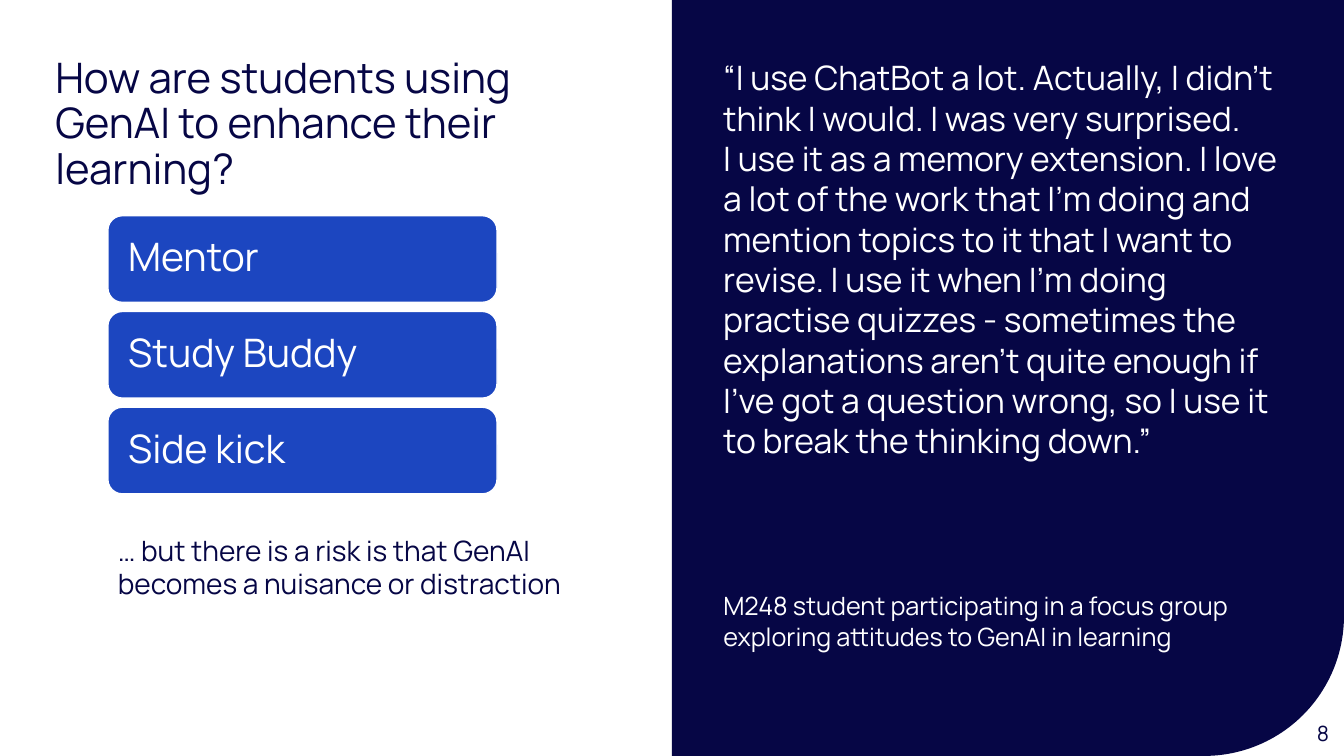
from pptx import Presentation
from pptx.dml.color import RGBColor
from pptx.enum.shapes import MSO_SHAPE
from pptx.enum.text import MSO_ANCHOR, PP_ALIGN
from pptx.util import Inches, Pt

NAVY = RGBColor(0x06, 0x06, 0x45)
BLUE = RGBColor(0x1C, 0x46, 0xC0)
WHITE = RGBColor(0xFF, 0xFF, 0xFF)
FONT = "Manrope"

SLIDE_WIDTH, SLIDE_HEIGHT = 13.33, 7.5
HALF = SLIDE_WIDTH / 2

TITLE = "How are students using GenAI to enhance their learning?"
ROLES = ["Mentor", "Study Buddy", "Side kick"]
RISK = "… but there is a risk is that GenAI becomes a nuisance or distraction"
QUOTE = (
    "“I use ChatBot a lot. Actually, I didn't think I would. I was very surprised.\n"
    "I use it as a memory extension. I love a lot of the work that I'm doing and "
    "mention topics to it that I want to revise. I use it when I'm doing practise "
    "quizzes - sometimes the explanations aren't quite enough if I've got a question "
    "wrong, so I use it to break the thinking down.”"
)
SPEAKER = "M248 student participating in a focus group exploring attitudes to GenAI in learning"


def write(frame, text, size, color, align=PP_ALIGN.LEFT, spacing=None, after=None):
    """Fill a text frame with one formatted paragraph."""
    frame.word_wrap = True
    paragraph = frame.paragraphs[0]
    paragraph.text = text
    paragraph.alignment = align
    if spacing is not None:
        paragraph.line_spacing = spacing
    if after is not None:
        paragraph.space_after = Pt(after)
    font = paragraph.font
    font.name, font.size = FONT, Pt(size)
    font.color.rgb = color


def add_text(slide, box, text, **style):
    label = slide.shapes.add_textbox(*map(Inches, box))
    write(label.text_frame, text, **style)


def add_filled(slide, preset, box, color):
    shape = slide.shapes.add_shape(preset, *map(Inches, box))
    shape.shadow.inherit = False
    shape.fill.solid()
    shape.fill.fore_color.rgb = color
    shape.line.fill.background()
    return shape


def add_role_cards(slide, box):
    """Stack the role cards evenly from the top to the bottom of the box."""
    left, top, width, height = box
    gap = 0.09
    card_height = (height - gap * (len(ROLES) - 1)) / len(ROLES)
    for index, role in enumerate(ROLES):
        card_top = top + index * (card_height + gap)
        card = add_filled(slide, MSO_SHAPE.ROUNDED_RECTANGLE,
                          (left, card_top, width, card_height), BLUE)
        card.line.color.rgb = WHITE
        card.line.width = Pt(1)
        frame = card.text_frame
        frame.vertical_anchor = MSO_ANCHOR.MIDDLE
        frame.margin_left = frame.margin_right = Inches(0.16)
        write(frame, role, size=28, color=WHITE, spacing=0.9)


def add_usage_half(slide, box):
    left, top, width, height = box
    # Heading
    add_text(slide, (left + 0.45, top + 0.52, 5.37, 0.46), TITLE,
             size=30, color=NAVY, spacing=0.9, after=12)
    # Roles and the risk beneath them
    add_role_cards(slide, (left + 1.07, top + 2.14, 3.86, 2.76))
    add_text(slide, (left + 1.07, top + 5.24, 5.19, 1.08), RISK, size=20, color=NAVY)


def add_quote_half(slide, box):
    left, top, width, height = box
    # Panel with its rounded corner at the bottom right
    panel = add_filled(slide, MSO_SHAPE.ROUND_1_RECTANGLE, box, NAVY)
    panel.adjustments[0] = 0.208
    panel._element.spPr.xfrm.set("flipV", "1")
    # Quotation and speaker
    add_text(slide, (left + 0.41, top + 0.52, 5.9, 5.25), QUOTE, size=24, color=WHITE)
    add_text(slide, (left + 0.41, top + 5.81, 5.35, 1.01), SPEAKER, size=18, color=WHITE)
    # Page number
    add_text(slide, (left + width - 0.74, top + height - 0.4, 0.69, 0.35), "8",
             size=15, color=NAVY, align=PP_ALIGN.RIGHT)


def main():
    deck = Presentation()
    deck.slide_width, deck.slide_height = Inches(SLIDE_WIDTH), Inches(SLIDE_HEIGHT)
    slide = deck.slides.add_slide(deck.slide_layouts[6])
    add_usage_half(slide, (0, 0, HALF, SLIDE_HEIGHT))
    add_quote_half(slide, (HALF, 0, HALF, SLIDE_HEIGHT))
    deck.save("out.pptx")


if __name__ == "__main__":
    main()
